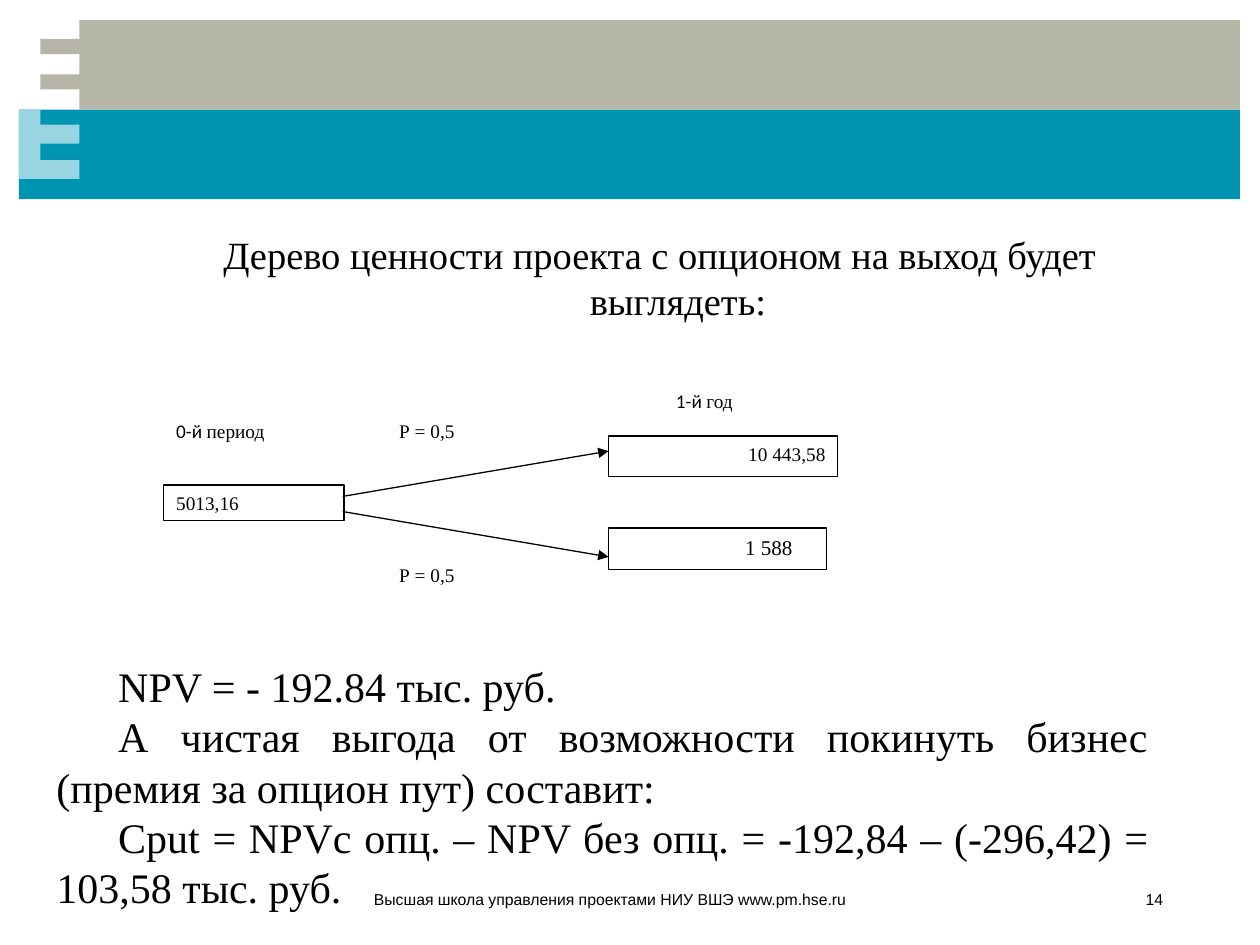
from lxml import etree
from pptx import Presentation
from pptx.dml.color import RGBColor
from pptx.enum.shapes import MSO_CONNECTOR, MSO_SHAPE
from pptx.enum.text import MSO_ANCHOR, PP_ALIGN
from pptx.oxml.ns import qn
from pptx.util import Inches, Pt

RECTANGLE = MSO_SHAPE.RECTANGLE
STRAIGHT = MSO_CONNECTOR.STRAIGHT
TOP, MIDDLE = MSO_ANCHOR.TOP, MSO_ANCHOR.MIDDLE
LEFT, CENTER, RIGHT = PP_ALIGN.LEFT, PP_ALIGN.CENTER, PP_ALIGN.RIGHT
JUSTIFY = PP_ALIGN.JUSTIFY

COLORS = {"teal": "0094B3", "pale_teal": "99D4E1", "gray": "B5B5A8",
          "white": "FFFFFF", "black": "000000"}
SERIF, SANS, LABEL = "Times New Roman", "Arial", "Calibri"

# Columns and rows of the banner and of the value tree
BAND_LEFT, TEETH_LEFT, BAND_START, BAND_RIGHT = 0.15, 0.32, 0.63, 9.84
BAND_TOP, BAND_MIDDLE, BAND_HEIGHT = 0.16, 0.87, 0.71
NOW, CHANCE, YEAR_ONE = 1.3, 3.07, 4.83
BRANCH_START, BRANCH_MIDDLE = 2.72, 4.0


def color(name):
    return RGBColor.from_string(COLORS[name])


def paint(shape, fill, line=None):
    shape.shadow.inherit = False
    shape.fill.solid()
    shape.fill.fore_color.rgb = color(fill)
    if line:
        shape.line.color.rgb = color(line)
        shape.line.width = Pt(0.75)
    else:
        shape.line.fill.background()


def add_rectangle(page, area, fill, line=None):
    box = page.shapes.add_shape(RECTANGLE, *map(Inches, area))
    paint(box, fill, line)
    return box


def add_outline(page, points, fill):
    builder = page.shapes.build_freeform(
        Inches(points[0][0]), Inches(points[0][1]), scale=1.0)
    builder.add_line_segments(
        [(Inches(x), Inches(y)) for x, y in points[1:]], close=True)
    paint(builder.convert_to_shape(), fill)


def add_runs(para, runs, size, align):
    """Add (text, font name) pairs to a paragraph."""
    para.alignment = align
    for text, font in runs:
        span = para.add_run()
        span.text = text
        span.font.name = font
        span.font.size = Pt(size)
        span.font.color.rgb = color("black")


def set_indent(para, margin, first_line):
    properties = para._p.get_or_add_pPr()
    properties.set("marL", str(Inches(margin)))
    properties.set("indent", str(Inches(first_line)))
    return properties


def add_banner(page):
    add_rectangle(page, (BAND_LEFT, BAND_MIDDLE, BAND_RIGHT - BAND_LEFT,
                         BAND_HEIGHT), "teal")
    gray_teeth = [(BAND_START, 0.71), (TEETH_LEFT, 0.71),
                  (TEETH_LEFT, 0.59), (BAND_START, 0.59),
                  (BAND_START, 0.43), (TEETH_LEFT, 0.43),
                  (TEETH_LEFT, 0.31), (BAND_START, 0.31)]
    add_outline(page, [(BAND_START, BAND_TOP), (BAND_RIGHT, BAND_TOP),
                       (BAND_RIGHT, BAND_MIDDLE), (BAND_START, BAND_MIDDLE),
                       *gray_teeth], "gray")
    add_outline(page, [(BAND_START, 1.42), (BAND_START, 1.27),
                       (TEETH_LEFT, 1.27), (TEETH_LEFT, 1.14),
                       (BAND_START, 1.14), (BAND_START, 0.99),
                       (TEETH_LEFT, 0.99), (TEETH_LEFT, BAND_MIDDLE),
                       (BAND_LEFT, BAND_MIDDLE), (BAND_LEFT, 1.42)],
                "pale_teal")


def fill_body(page, text):
    body = page.placeholders[1]
    body.left, body.top, body.width, body.height = map(
        Inches, (1.14, 1.78, 8.19, 5.04))
    para = body.text_frame.paragraphs[0]
    properties = set_indent(para, 0.29, -0.29)
    etree.SubElement(properties, qn("a:buNone"))
    para.space_before = Pt(0)
    add_runs(para, [(text, SERIF)], 22, CENTER)


def add_tree_box(page, area, runs, align=LEFT, line="white", size=11,
                 right_inset=0.1):
    box = add_rectangle(page, area, "white", line)
    frame = box.text_frame
    frame.word_wrap = True
    frame.vertical_anchor = TOP
    frame.margin_right = Inches(right_inset)
    add_runs(frame.paragraphs[0], runs, size, align)


def add_branch(page, direction):
    """Draw an arrow to the upper (-1) or lower (1) outcome."""
    arrow = page.shapes.add_connector(
        STRAIGHT, Inches(BRANCH_START),
        Inches(BRANCH_MIDDLE + direction * 0.06),
        Inches(YEAR_ONE), Inches(BRANCH_MIDDLE + direction * 0.42))
    arrow.line.color.rgb = color("black")
    arrow.line.width = Pt(0.75)
    etree.SubElement(arrow.line._get_or_add_ln(), qn("a:tailEnd"),
                     type="triangle")
    etree.SubElement(arrow._element.spPr, qn("a:effectLst"))


def add_tree(page):
    add_tree_box(page, (NOW, 3.85, 1.43, 0.28), [("5013,16", SERIF)],
                 line="black")
    add_tree_box(page, (YEAR_ONE, 3.46, 1.82, 0.32),
                 [("10 443,58", SERIF)], RIGHT, "black")
    add_tree_box(page, (YEAR_ONE, 4.19, 1.73, 0.33),
                 [("1 588", SERIF)], RIGHT, "black", 12, 0.27)
    for direction in (-1, 1):
        add_branch(page, direction)
    add_tree_box(page, (NOW, 3.28, 1.67, 0.29),
                 [("0-й ", LABEL), ("период", SERIF)])
    add_tree_box(page, (YEAR_ONE, 3.04, 1.52, 0.34),
                 [("1-й ", LABEL), ("год", SERIF)], CENTER)
    for top in (3.28, 4.42):
        add_tree_box(page, (CHANCE, top, 1.33, 0.36), [("Р = 0,5", SERIF)])


def add_text(page, area, lines, font, size, align, first_line=0):
    box = page.shapes.add_textbox(*map(Inches, area))
    frame = box.text_frame
    frame.word_wrap = True
    frame.vertical_anchor = MIDDLE
    for index, line in enumerate(lines):
        para = frame.add_paragraph() if index else frame.paragraphs[0]
        set_indent(para, 0, first_line)
        add_runs(para, [(line, font)], size, align)


def main():
    deck = Presentation()
    deck.slide_width, deck.slide_height = Inches(10), Inches(7.5)
    page = deck.slides.add_slide(deck.slide_layouts[1])
    title = page.shapes.title._element
    title.getparent().remove(title)

    add_banner(page)
    fill_body(page, "Дерево ценности проекта с опционом на выход будет "
                    "выглядеть:")
    add_tree(page)
    add_text(page, (0.35, 5.18, 8.86, 2.12), [
        "NPV = - 192.84 тыс. руб.",
        "А чистая выгода от возможности покинуть бизнес "
        "(премия за опцион пут) составит:",
        "Cput = NPVс опц. – NPV без опц. = -192,84 – (-296,42) = "
        "103,58 тыс. руб.",
    ], SERIF, 24, JUSTIFY, 0.49)
    add_text(page, (1.14, 7.06, 5.67, 0.15),
             ["Высшая школа управления проектами НИУ ВШЭ www.pm.hse.ru"],
             SANS, 9, RIGHT)
    add_text(page, (8.86, 7.06, 0.47, 0.15), ["14"], SANS, 9, RIGHT)
    deck.save("out.pptx")


if __name__ == "__main__":
    main()
